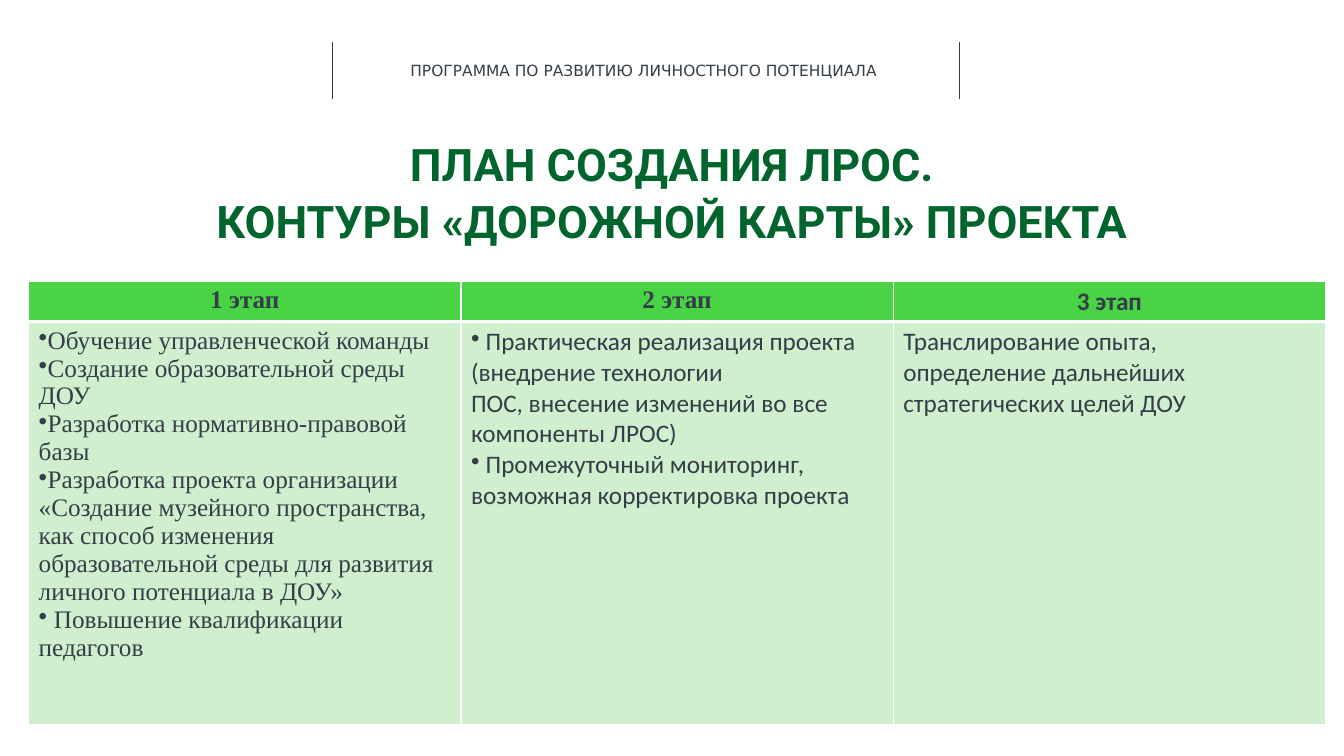
from lxml.etree import SubElement
from pptx import Presentation
from pptx.dml.color import RGBColor
from pptx.enum.shapes import MSO_CONNECTOR
from pptx.enum.text import MSO_ANCHOR, MSO_AUTO_SIZE, PP_ALIGN
from pptx.oxml.ns import qn
from pptx.util import Inches, Pt

COLORS = {"text": "333E48", "title": "00642D", "header": "49D345",
          "body": "D0EFCF", "border": "FFFFFF"}
SERIF, SANS = "Times New Roman", "Calibri"

# Each stage: heading, heading font, body font, lines; "•" opens a bulleted line
STAGES = [
    ("1 этап", SERIF, SERIF, [
        "•Обучение управленческой команды",
        "•Создание образовательной среды ДОУ",
        "•Разработка нормативно-правовой базы",
        "•Разработка проекта организации",
        "«Создание музейного пространства, как способ изменения "
        "образовательной среды для развития личного потенциала в ДОУ»",
        "• Повышение квалификации",
        "педагогов"]),
    ("2 этап", SERIF, SANS, [
        "• Практическая реализация проекта (внедрение технологии",
        "ПОС, внесение изменений во все компоненты ЛРОС)",
        "• Промежуточный мониторинг, возможная корректировка проекта"]),
    ("3 этап", SANS, SANS, [
        "Транслирование опыта,",
        "определение дальнейших",
        "стратегических целей ДОУ"]),
]


class PlanSlide:
    """Places elements by percentages of the slide's width and height."""

    def __init__(self, deck):
        self.width, self.height = deck.slide_width, deck.slide_height
        self.slide = deck.slides.add_slide(deck.slide_layouts[5])

    def x(self, percent):
        return round(self.width * percent / 100)

    def y(self, percent):
        return round(self.height * percent / 100)

    def box(self, left, top, width, height):
        return self.x(left), self.y(top), self.x(width), self.y(height)

    def color(self, name):
        return RGBColor.from_string(COLORS[name])

    def fill_text(self, frame, lines, size, font, color="text", bold=False,
                  align=PP_ALIGN.LEFT):
        frame.word_wrap = True
        for index, line in enumerate(lines):
            paragraph = frame.add_paragraph() if index else frame.paragraphs[0]
            if line.startswith("•"):
                properties = paragraph._p.get_or_add_pPr()
                SubElement(properties, qn("a:buChar"), char="•")
            paragraph.text = line.removeprefix("•")
            paragraph.alignment = align
            paragraph.font.size = Pt(size)
            paragraph.font.name = font
            paragraph.font.bold = bold
            paragraph.font.color.rgb = self.color(color)

    def title(self, lines, *place):
        heading = self.slide.shapes.title
        heading.left, heading.top, heading.width, heading.height = self.box(*place)
        frame = heading.text_frame
        frame.auto_size = MSO_AUTO_SIZE.NONE
        frame.vertical_anchor = MSO_ANCHOR.TOP
        frame.margin_left = frame.margin_right = 0
        frame.margin_top = frame.margin_bottom = 0
        self.fill_text(frame, lines, 32, "Roboto", "title", True, PP_ALIGN.CENTER)
        for index, paragraph in enumerate(frame.paragraphs):
            paragraph.line_spacing = 0.9
            paragraph.space_before = Pt(6 if index else 0)

    def label(self, text, *place):
        frame = self.slide.shapes.add_textbox(*self.box(*place)).text_frame
        frame.margin_right = 0
        self.fill_text(frame, [text], 11, "DejaVu Sans")

    def divider(self, column, top, bottom):
        line = self.slide.shapes.add_connector(
            MSO_CONNECTOR.STRAIGHT, self.x(column), self.y(top),
            self.x(column), self.y(bottom))
        line.line.color.rgb = self.color("text")
        line.line.width = Pt(0.5)
        SubElement(line._element.spPr, qn("a:effectLst"))

    def cell(self, cell, fill, lines, font, top=1, bottom=1, **style):
        self.fill_text(cell.text_frame, lines, 18, font, **style)
        properties = cell._tc.get_or_add_tcPr()
        for side, points in (("L", 1), ("R", 1), ("T", top), ("B", bottom)):
            border = SubElement(properties, qn(f"a:ln{side}"), w=str(Pt(points)))
            paint = SubElement(border, qn("a:solidFill"))
            SubElement(paint, qn("a:srgbClr"), val=COLORS["border"])
        cell.fill.solid()
        cell.fill.fore_color.rgb = self.color(fill)

    def stages(self, stages, left, top, width, row_heights):
        table = self.slide.shapes.add_table(
            len(row_heights), len(stages),
            *self.box(left, top, width, sum(row_heights))).table
        for row, height in zip(table.rows, row_heights):
            row.height = self.y(height)
        for column, (heading, heading_font, font, lines) in enumerate(stages):
            self.cell(table.cell(0, column), "header", [heading], heading_font,
                      bottom=3, bold=True, align=PP_ALIGN.CENTER)
            self.cell(table.cell(1, column), "body", lines, font, top=3)


def main():
    deck = Presentation()
    deck.slide_width, deck.slide_height = Inches(13.33), Inches(7.5)
    plan = PlanSlide(deck)

    # Programme name between two dividers
    for column in (24.7, 71.4):
        plan.divider(column, 5.6, 13.1)
    plan.label("ПРОГРАММА ПО РАЗВИТИЮ ЛИЧНОСТНОГО ПОТЕНЦИАЛА",
               29.8, 7.47, 36.5, 3.87)

    # Title
    plan.title(["ПЛАН СОЗДАНИЯ ЛРОС.", "КОНТУРЫ «ДОРОЖНОЙ КАРТЫ» ПРОЕКТА"],
               0.08, 18.93, 99.85, 14)

    # Table of stages
    plan.stages(STAGES, 2.13, 37.2, 96.5, (5.33, 53.3))

    deck.save("out.pptx")


if __name__ == "__main__":
    main()
